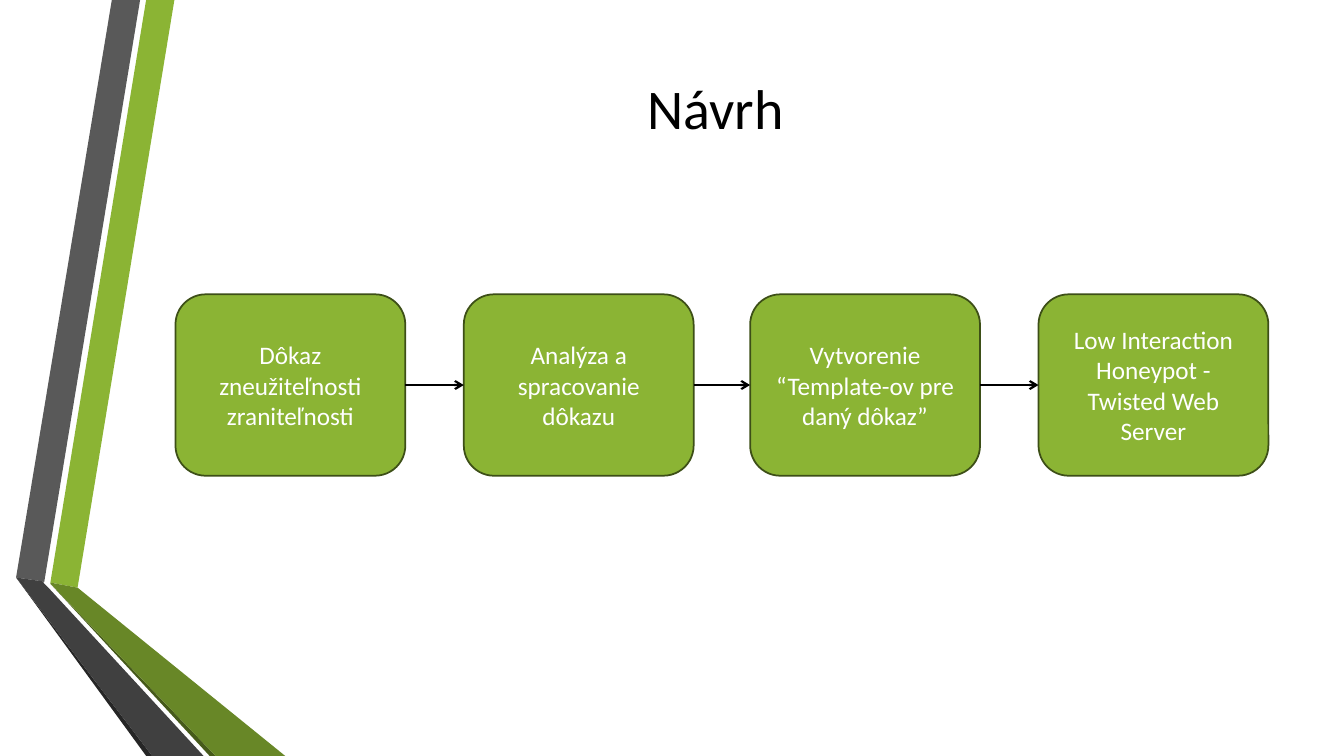
from lxml import etree
from pptx import Presentation
from pptx.dml.color import RGBColor
from pptx.enum.shapes import MSO_CONNECTOR, MSO_SHAPE
from pptx.enum.text import MSO_ANCHOR, PP_ALIGN
from pptx.oxml.ns import qn
from pptx.util import Pt

PX = 9144  # EMU per px, 100 px to the inch
FONT = "Calibri"
GREEN = "8BB434"
ROUND_RECT = MSO_SHAPE.ROUNDED_RECTANGLE
STRAIGHT = MSO_CONNECTOR.STRAIGHT
MIDDLE = MSO_ANCHOR.MIDDLE
CENTER = PP_ALIGN.CENTER
LEFT_SIDE, RIGHT_SIDE = 1, 3


def rgb(value):
    return RGBColor.from_string(value)


def write_centered(shape, lines, size, color):
    tf = shape.text_frame
    tf.word_wrap = True
    tf.vertical_anchor = MIDDLE
    for i, line in enumerate(lines):
        p = tf.paragraphs[0] if i == 0 else tf.add_paragraph()
        p.alignment = CENTER
        r = p.add_run()
        r.text = line
        r.font.name = FONT
        r.font.size = Pt(size)
        r.font.color.rgb = rgb(color)


prs = Presentation()
prs.slide_width = 1333 * PX
prs.slide_height = 750 * PX
s = prs.slides.add_slide(prs.slide_layouts[6])

# Folded ribbons along the left edge
ribbons = [
    (GREEN, [(50, 578), (77, 583), (173, 0), (145, 0)]),
    ("595959", [(139, 0), (111, 0), (16, 573), (44, 577)]),
    ("262626", [(16, 573), (145, 750), (151, 750)]),
    ("465A1A", [(50, 579), (208, 750), (214, 750)]),
    ("688727", [(50, 579), (214, 750), (283, 750), (77, 583), (50, 578)]),
    ("404040", [(202, 750), (48, 583), (43, 578), (44, 577), (16, 573), (151, 750)]),
]
for color, points in ribbons:
    builder = s.shapes.build_freeform(*points[0], scale=PX)
    builder.add_line_segments(points[1:], close=True)
    sp = builder.convert_to_shape()
    sp.shadow.inherit = False
    sp.fill.solid()
    sp.fill.fore_color.rgb = rgb(color)
    sp.line.fill.background()

title = s.shapes.add_textbox(162 * PX, 10 * PX, 1096 * PX, 192 * PX)
write_centered(title, ["Návrh"], 40, "000000")

# Process steps, each joined to the one before it
steps = [
    (174, ["Dôkaz zneužiteľnosti zraniteľnosti"]),
    (460, ["Analýza a spracovanie dôkazu"]),
    (744, ["Vytvorenie “Template-ov pre daný dôkaz”"]),
    (1030, ["Low Interaction Honeypot -", "Twisted Web Server"]),
]
previous = None
for left, lines in steps:
    box = s.shapes.add_shape(ROUND_RECT, left * PX, 292 * PX, 228 * PX, 180 * PX)
    box.shadow.inherit = False
    box.fill.solid()
    box.fill.fore_color.rgb = rgb(GREEN)
    box.line.color.rgb = rgb("3D4F17")
    box.line.width = Pt(1.25)
    write_centered(box, lines, 18, "FFFFFF")

    if previous is not None:
        arrow = s.shapes.add_connector(STRAIGHT, 0, 0, 0, 0)
        arrow.begin_connect(previous, RIGHT_SIDE)
        arrow.end_connect(box, LEFT_SIDE)
        arrow.line.color.rgb = rgb("000000")
        arrow.line.width = Pt(1.5)
        ln = arrow.line._get_or_add_ln()
        etree.SubElement(ln, qn("a:tailEnd"), type="arrow")
        etree.SubElement(arrow._element.spPr, qn("a:effectLst"))
    previous = box

prs.save("out.pptx")
